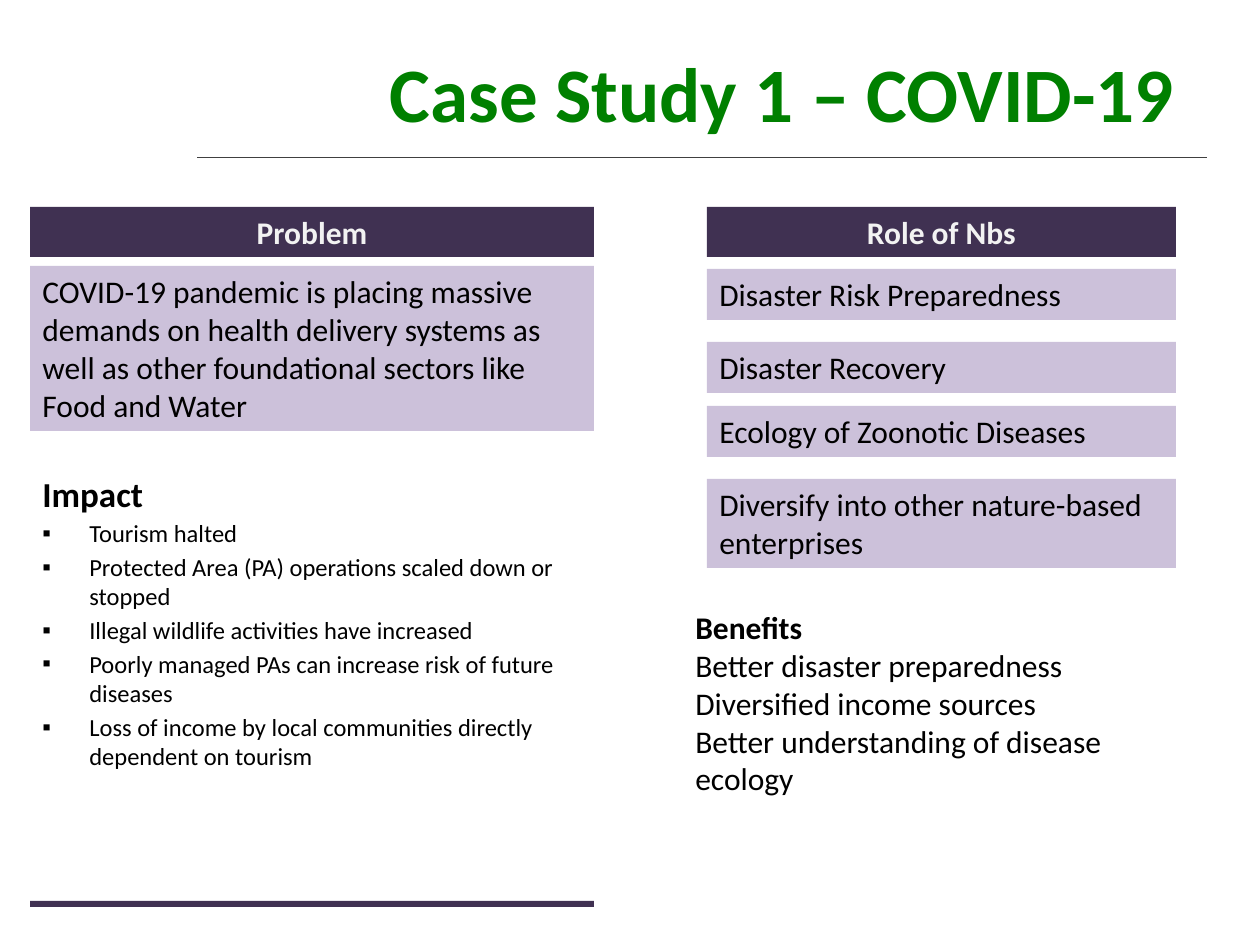
from lxml import etree
from pptx import Presentation
from pptx.dml.color import RGBColor
from pptx.enum.shapes import MSO_CONNECTOR, MSO_SHAPE
from pptx.enum.text import MSO_ANCHOR, PP_ALIGN
from pptx.oxml.ns import qn
from pptx.util import Pt

PX = 914400 // 126
FONT = "Calibri"
LEFT, CENTER, RIGHT = PP_ALIGN.LEFT, PP_ALIGN.CENTER, PP_ALIGN.RIGHT
TOP, MIDDLE = MSO_ANCHOR.TOP, MSO_ANCHOR.MIDDLE
COLORS = {"title": "008000", "dark": "403152", "light": "CCC1DA",
          "head": "F2F2F2", "text": "000000", "rule": "404040"}

TITLE = "Case Study 1 – COVID-19 "
IMPACT = ["Impact",
          "Tourism halted",
          "Protected Area (PA) operations scaled down or stopped",
          "Illegal wildlife activities have increased",
          "Poorly managed PAs can increase risk of future diseases",
          "Loss of income by local communities directly dependent on tourism"]
BENEFITS = ["Benefits",
            "Better disaster preparedness",
            "Diversified income sources",
            "Better understanding of disease ecology"]
# Each column: left, width, heading, panels as (top, height, text)
COLUMNS = [
    (30, 564, "Problem", [
        (266, 165, "COVID-19 pandemic is placing massive demands on health delivery "
                   "systems as well as other foundational sectors like Food and Water")]),
    (707, 469, "Role of Nbs", [
        (269, 51, "Disaster Risk Preparedness"),
        (342, 51, "Disaster Recovery"),
        (406, 51, "Ecology of Zoonotic Diseases"),
        (479, 89, "Diversify into other nature-based enterprises")]),
]
HEAD_TOP, HEAD_H = 207, 50
FOOT_TOP, FOOT_H = 901, 6
BULLET_INDENT = 47


def emu(*lengths):
    return [n * PX for n in lengths]


def rgb(name):
    return RGBColor.from_string(COLORS[name])


def style(p, size, color="text", bold=False, align=LEFT):
    p.alignment = align
    for r in p.runs:
        r.font.name, r.font.size, r.font.bold = FONT, Pt(size), bold
        r.font.color.rgb = rgb(color)


def add_text(s, box, lines, anchor=TOP):
    tf = s.shapes.add_textbox(*emu(*box)).text_frame
    tf.word_wrap, tf.vertical_anchor = True, anchor
    tf.text = "\n".join(lines)
    return tf.paragraphs


def add_panel(s, box, fill, text="", **font):
    sp = s.shapes.add_shape(MSO_SHAPE.RECTANGLE, *emu(*box))
    sp.shadow.inherit = False
    sp.fill.solid()
    sp.fill.fore_color.rgb = rgb(fill)
    sp.line.fill.background()
    if text:
        tf = sp.text_frame
        tf.word_wrap, tf.vertical_anchor = True, TOP
        tf.text = text
        style(tf.paragraphs[0], 18, **font)


def add_bullet(p):
    pPr = p._p.get_or_add_pPr()
    pPr.set("marL", str(BULLET_INDENT * PX))
    pPr.set("indent", str(-BULLET_INDENT * PX))
    etree.SubElement(pPr, qn("a:buFont"), typeface="Arial")
    etree.SubElement(pPr, qn("a:buChar"), char="▪")


def add_rule(s, x1, x2, y):
    line = s.shapes.add_connector(MSO_CONNECTOR.STRAIGHT, *emu(x1, y, x2, y))
    line.line.color.rgb = rgb("rule")
    line.line.width = Pt(0.5)
    etree.SubElement(line._element.spPr, qn("a:effectLst"))


def main():
    prs = Presentation()
    prs.slide_width, prs.slide_height = emu(1260, 945)
    s = prs.slides.add_slide(prs.slide_layouts[6])

    title, = add_text(s, (71, 13, 1134, 158), [TITLE], MIDDLE)
    style(title, 44, "title", True, RIGHT)
    add_rule(s, 1207, 197, 157)

    for left, width, heading, panels in COLUMNS:
        add_panel(s, (left, HEAD_TOP, width, HEAD_H), "dark", heading,
                  color="head", bold=True, align=CENTER)
        for top, height, text in panels:
            add_panel(s, (left, top, width, height), "light", text)

    heading, *items = add_text(s, (30, 466, 607, 333), IMPACT)
    style(heading, 20, bold=True)
    heading.space_before = Pt(4)
    for p in items:
        style(p, 14)
        p.space_before = Pt(2.4)
        add_bullet(p)

    heading, *items = add_text(s, (683, 602, 518, 203), BENEFITS)
    style(heading, 18, bold=True)
    for p in items:
        style(p, 18)

    left, width = COLUMNS[0][:2]
    add_panel(s, (left, FOOT_TOP, width, FOOT_H), "dark")
    prs.save("out.pptx")


if __name__ == "__main__":
    main()
